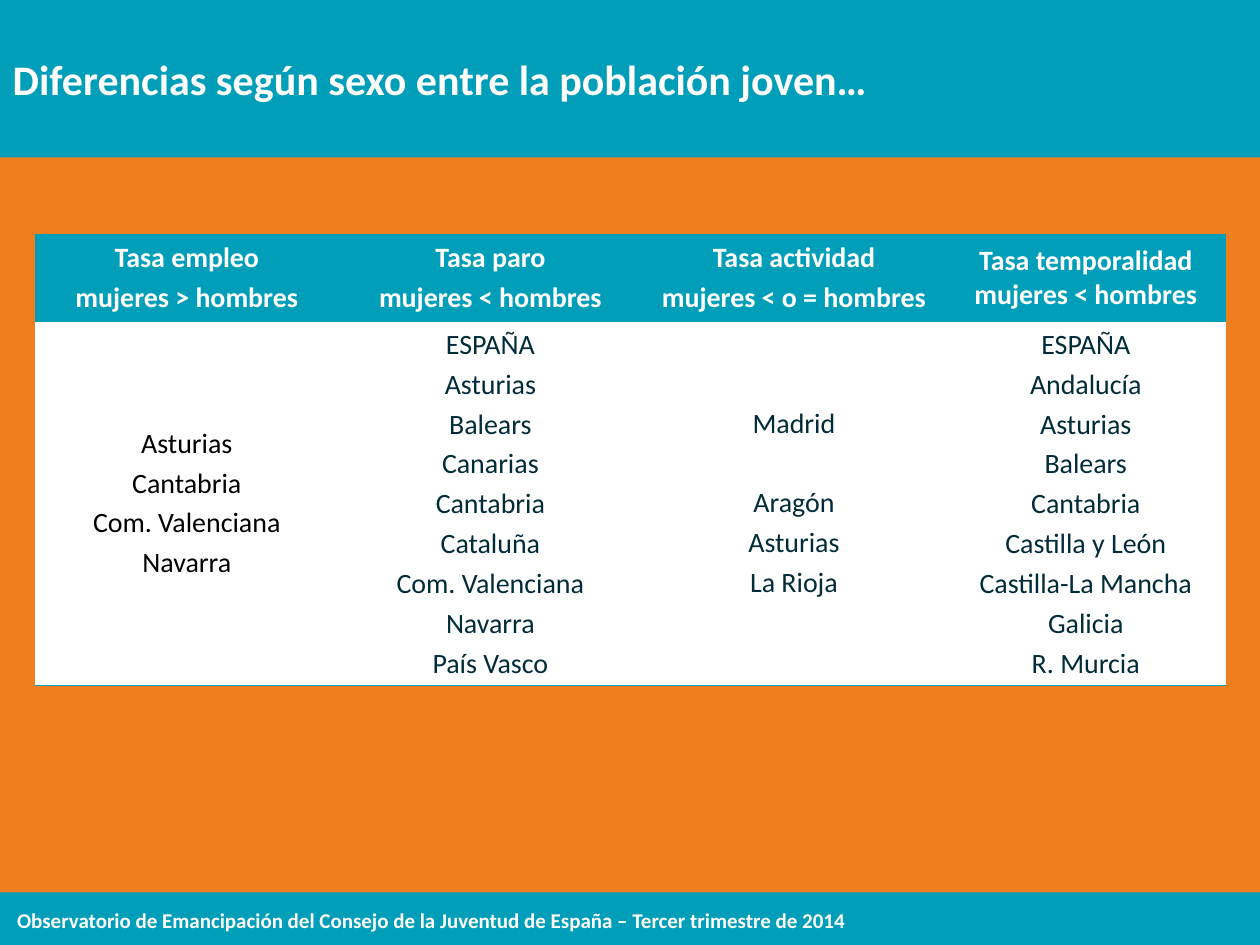
import pptx
import pptx.util
import pptx.dml.color
import pptx.enum.shapes
import pptx.enum.text
import pptx.oxml
import pptx.oxml.ns

Pt = pptx.util.Pt
Align = pptx.enum.text.PP_ALIGN
Anchor = pptx.enum.text.MSO_ANCHOR

WIDE, HIGH = 720, 540
FACE = "Calibri"
GAP = 3.2
LINE = 19.5
COLORS = {"teal": "009EB8", "orange": "EE7E1F", "white": "FFFFFF",
          "black": "000000", "navy": "002C3A"}

# Each group of names in a column is set apart by one empty line.
COLUMNS = [
    (173.5, ["Tasa empleo", "mujeres > hombres"], "black",
     [["Asturias", "Cantabria", "Com. Valenciana", "Navarra"]]),
    (173.5, ["Tasa paro", "mujeres < hombres"], "navy",
     [["ESPAÑA", "Asturias", "Balears", "Canarias", "Cantabria", "Cataluña",
       "Com. Valenciana", "Navarra", "País Vasco"]]),
    (173.5, ["Tasa actividad", "mujeres < o = hombres"], "navy",
     [["Madrid"], ["Aragón", "Asturias", "La Rioja"]]),
    (160, ["Tasa temporalidad mujeres < hombres"], "navy",
     [["ESPAÑA", "Andalucía", "Asturias", "Balears", "Cantabria",
       "Castilla y León", "Castilla-La Mancha", "Galicia", "R. Murcia"]]),
]


def color(name):
    return pptx.dml.color.RGBColor.from_string(COLORS[name])


def paint(fill, name):
    fill.solid()
    fill.fore_color.rgb = color(name)


def style(para, size, tint, bold, align=Align.LEFT):
    para.alignment = align
    font = para.font
    font.name, font.size, font.bold = FACE, Pt(size), bold
    font.color.rgb = color(tint)


def place(shape, left, top, width, height):
    shape.left, shape.top = Pt(left), Pt(top)
    shape.width, shape.height = Pt(width), Pt(height)


def add_title(slide, text):
    title = slide.shapes.title
    place(title, 0, 0, WIDE, 90)
    paint(title.fill, "teal")
    frame = title.text_frame
    frame.text = text
    frame.auto_size = pptx.enum.text.MSO_AUTO_SIZE.NONE
    frame.vertical_anchor = Anchor.MIDDLE
    style(frame.paragraphs[0], 24, "white", True)


def add_footer(slide, text):
    kind = pptx.enum.shapes.MSO_SHAPE.RECTANGLE
    band = slide.shapes.add_shape(kind, 0, Pt(510), Pt(WIDE), Pt(30))
    band.shadow.inherit = False
    paint(band.fill, "teal")
    band.line.fill.background()
    box = slide.shapes.add_textbox(Pt(2.7), Pt(515), Pt(556), Pt(21.8))
    box.text_frame.word_wrap = True
    box.text_frame.text = text
    style(box.text_frame.paragraphs[0], 12, "white", True)


def rule(cell):
    """Draw teal lines above and below the cell, and none at its sides."""
    props = cell._tc.get_or_add_tcPr()
    names = pptx.oxml.ns.nsdecls("a")
    teal = f'<a:solidFill><a:srgbClr val="{COLORS["teal"]}"/></a:solidFill>'
    for side in "LRTB":
        fill = "<a:noFill/>" if side in "LR" else teal
        props.append(pptx.oxml.parse_xml(
            f'<a:ln{side} {names} w="{Pt(1)}">{fill}</a:ln{side}>'))


def fill_cell(cell, groups, back, tint, bold):
    rule(cell)
    paint(cell.fill, back)
    cell.vertical_anchor = Anchor.MIDDLE
    frame = cell.text_frame
    frame.text = "\n".join(text for group in groups for text in group)
    paras = iter(frame.paragraphs)
    for g, group in enumerate(groups):
        for i in range(len(group)):
            para = next(paras)
            style(para, 16, tint, bold, Align.CENTER)
            if i:
                para.space_before = Pt(GAP)
            elif g:
                para.space_before = Pt(2 * GAP + LINE)


def add_rates(slide):
    width = sum(column[0] for column in COLUMNS)
    heights = [49.5, 208]
    frame = slide.shapes.add_table(len(heights), len(COLUMNS), Pt(20), Pt(134.2),
                                   Pt(width), Pt(sum(heights)))
    table = frame.table
    table.first_row = table.horz_banding = False
    for row, height in zip(table.rows, heights):
        row.height = Pt(height)
    for c, (width, head, tint, groups) in enumerate(COLUMNS):
        table.columns[c].width = Pt(width)
        fill_cell(table.cell(0, c), [head], "teal", "white", True)
        fill_cell(table.cell(1, c), groups, "white", tint, False)


def main():
    deck = pptx.Presentation()
    deck.slide_width, deck.slide_height = Pt(WIDE), Pt(HIGH)
    slide = deck.slides.add_slide(deck.slide_layouts[5])
    paint(slide.background.fill, "orange")
    add_footer(slide, "Observatorio de Emancipación del Consejo de la Juventud "
                      "de España – Tercer trimestre de 2014")
    add_title(slide, "Diferencias según sexo entre la población joven…")
    add_rates(slide)
    deck.save("out.pptx")


if __name__ == "__main__":
    main()
